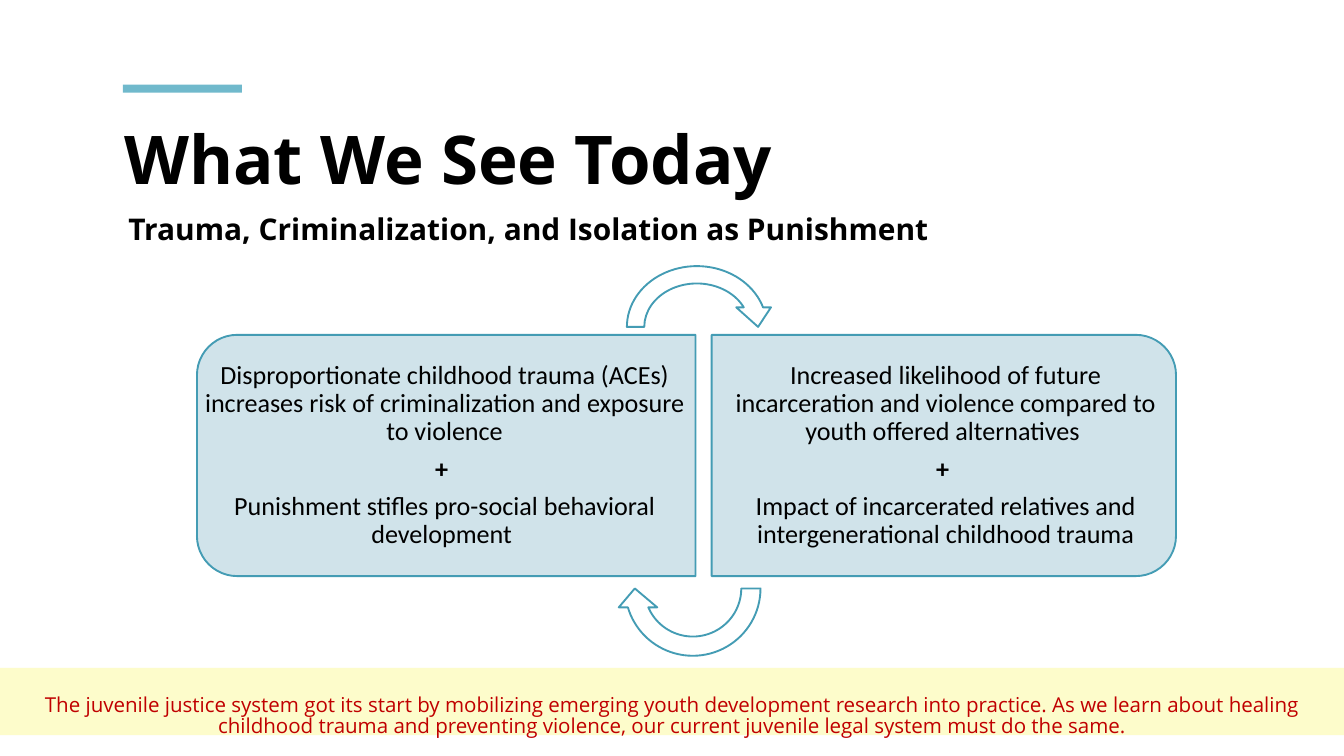
from lxml import etree
from pptx import Presentation
from pptx.dml.color import RGBColor
from pptx.enum import shapes, text
from pptx.oxml.ns import qn
from pptx.util import Pt

BLACK = RGBColor(0x00, 0x00, 0x00)
WHITE = RGBColor(0xFF, 0xFF, 0xFF)
RED = RGBColor(0xC0, 0x00, 0x00)
CREAM = RGBColor(0xFD, 0xFC, 0xCB)
SKY = RGBColor(0x70, 0xB9, 0xCC)
PALE = RGBColor(0xD0, 0xE3, 0xEA)
TEAL = RGBColor(0x44, 0x9C, 0xB4)

KIND = shapes.MSO_SHAPE
MID, TOP = text.MSO_ANCHOR.MIDDLE, text.MSO_ANCHOR.TOP
LEFT, CENTER = text.PP_ALIGN.LEFT, text.PP_ALIGN.CENTER

CAUSE = (
    "Disproportionate childhood trauma (ACEs) increases risk of criminalization "
    "and exposure to violence",
    "Punishment stifles pro-social behavioral development ",
)
EFFECT = (
    "Increased likelihood of future incarceration and violence compared to "
    "youth offered alternatives ",
    "Impact of incarcerated relatives and intergenerational childhood trauma",
)
NOTE = (
    "The juvenile justice system got its start by mobilizing emerging youth "
    "development research into practice. As we learn about healing childhood "
    "trauma and preventing violence, our current juvenile legal system must do "
    "the same."
)


def place(item, box):
    """Move and size an item to a box given in points."""
    item.left, item.top, item.width, item.height = map(Pt, box)


def frame(item, pads, anchor):
    """Set up the text frame of an item and return it."""
    area = item.text_frame
    area.word_wrap = True
    area.auto_size = text.MSO_AUTO_SIZE.NONE
    area.vertical_anchor = anchor
    (area.margin_left, area.margin_top,
     area.margin_right, area.margin_bottom) = map(Pt, pads)
    return area


def write(para, words, face, size, color, bold, align):
    """Add one formatted run to a paragraph."""
    para.alignment = align
    run = para.add_run()
    run.text = words
    font = run.font
    font.name, font.size, font.bold = face, Pt(size), bold
    font.color.rgb = color


def fill_in(item, box, words, size, color=BLACK, bold=True, align=LEFT, pad=0):
    """Place a placeholder and give it one plain line of text."""
    place(item, box)
    para = frame(item, (7.2, pad, 7.2, 0), TOP).paragraphs[0]
    props = para._p.get_or_add_pPr()
    props.set("marL", "0")
    props.set("indent", "0")
    etree.SubElement(props, qn("a:buNone"))
    para.space_before = Pt(0)
    write(para, words, "Open Sans", size, color, bold, align)
    return para


def draw(slide, kind, box, fill, line=None, turn=0, bends=()):
    """Add a preset shape with flat fill and optional outline."""
    item = slide.shapes.add_shape(kind, *map(Pt, box))
    item.shadow.inherit = False
    item.rotation = turn
    for num, bend in enumerate(bends):
        item.adjustments[num] = bend
    item.fill.solid()
    item.fill.fore_color.rgb = fill
    if line is None:
        item.line.fill.background()
    else:
        item.line.color.rgb = line
        item.line.width = Pt(2)


def panel(slide, left, wide, turn, parts, pads):
    """Add a half-rounded panel, turned on its side, with its text."""
    tall, mid = 258.5, 488
    box = (left + (wide - tall) / 2, mid - wide / 2, tall, wide)
    draw(slide, KIND.ROUND_2_SAME_RECTANGLE, box, PALE, TEAL, turn, (0.167, 0))
    label = slide.shapes.add_textbox(Pt(left), Pt(371.5), Pt(wide), Pt(233))
    area = frame(label, pads, MID)
    for num, words in enumerate((parts[0], "+ ", parts[1])):
        para = area.add_paragraph() if num else area.paragraphs[0]
        para.line_spacing = 0.9
        para.space_after = Pt(10)
        write(para, words, "Calibri", 28, BLACK, num == 1, CENTER)


def arrow(slide, box, turn):
    """Add a curved arrow between the panels."""
    bends = (0.125, 11.423, 204.577, 108, 0.125)
    draw(slide, KIND.CIRCULAR_ARROW, box, WHITE, TEAL, turn, bends)


def main():
    """Build and save the slide."""
    deck = Presentation()
    deck.slide_width, deck.slide_height = Pt(1440), Pt(810)
    slide = deck.slides.add_slide(deck.slide_layouts.get_by_name("Two Content"))
    title, band, sub = list(slide.placeholders)[:3]

    draw(slide, KIND.RECTANGLE, (131.8, 90.7, 127.4, 8.6), SKY)
    fill_in(title, (126, 126, 1105, 72), "What We See Today", 72)
    fill_in(sub, (130.3, 224.6, 895, 72),
            "Trauma, Criminalization, and Isolation as Punishment", 32, pad=1)
    band.fill.solid()
    band.fill.fore_color.rgb = CREAM
    para = fill_in(band, (0, 715.7, 1440, 72), NOTE, 22, RED, False, CENTER, 29)
    para.line_spacing = 0.86

    panel(slide, 211, 534.2, 270, CAUSE, (8.6, 13.7, 12.2, 13.7))
    panel(slide, 762.5, 497.5, 90, EFFECT, (12.2, 13.7, 8.6, 13.7))
    arrow(slide, (662.4, 275.8, 168.5, 149), 0)
    arrow(slide, (659.5, 548, 165.6, 164.9), 180)
    deck.save("out.pptx")


if __name__ == "__main__":
    main()
